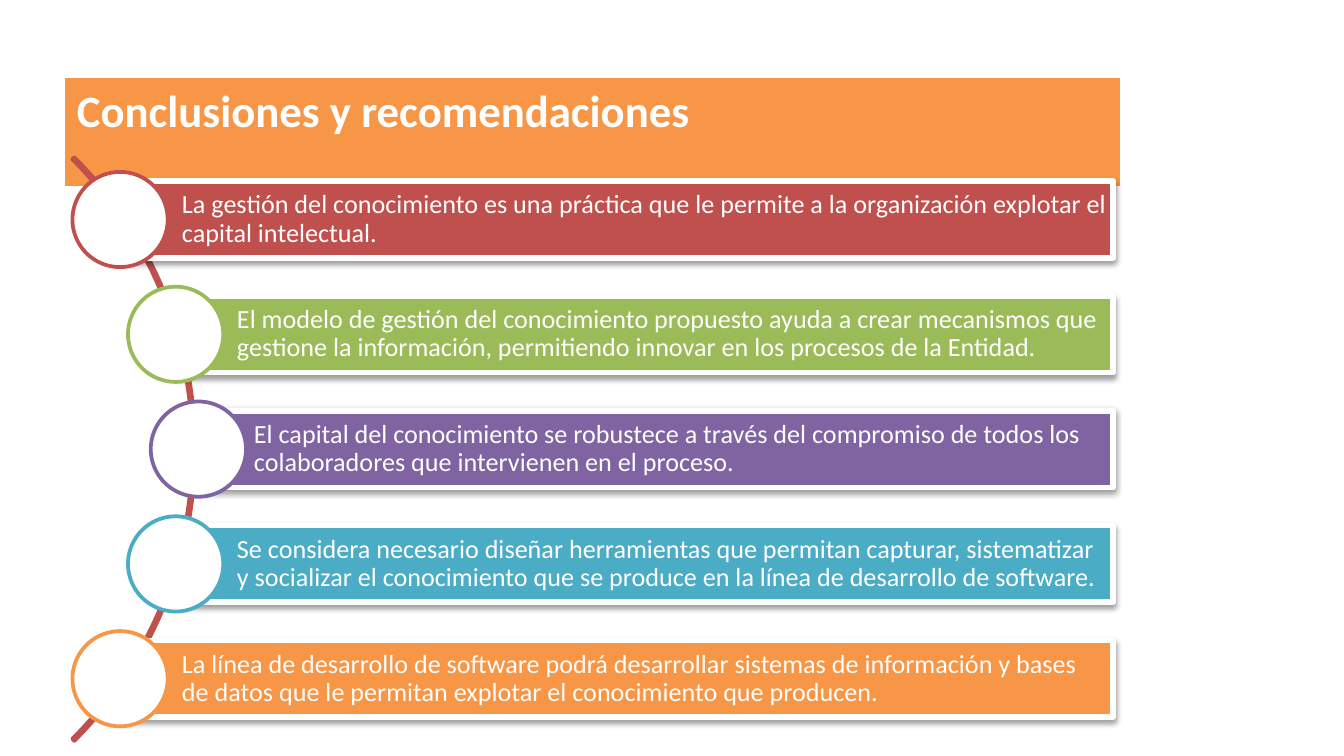
"""Build the slide of conclusions: a title bar and five banners along an arc."""
from lxml import etree
from pptx import Presentation
from pptx import util as u
from pptx.dml.color import RGBColor
from pptx.enum import shapes, text
from pptx.oxml import parse_xml

HUES = {
    "white": "FFFFFF", "red": "C0504D", "green": "9BBB59",
    "violet": "8064A2", "blue": "4BACC6", "orange": "F79646",
}
TITLE = "Conclusiones y recomendaciones"
# colour, left of the banner, centre of its circle, wording
ROWS = [
    ("red", 2.29, 2.27, "La gestión del conocimiento es una práctica que le permite "
     "a la organización explotar el capital intelectual."),
    ("green", 3.33, 3.32, "El modelo de gestión del conocimiento propuesto ayuda a crear "
     "mecanismos que gestione la información, permitiendo innovar en los procesos de la Entidad."),
    ("violet", 3.65, 3.75, "El capital del conocimiento se robustece a través del compromiso "
     "de todos los colaboradores que intervienen en el proceso."),
    ("blue", 3.33, 3.32, "Se considera necesario diseñar herramientas que permitan capturar, "
     "sistematizar y socializar el conocimiento que se produce en la línea de desarrollo de software."),
    ("orange", 2.29, 2.27, "La línea de desarrollo de software podrá desarrollar sistemas de "
     "información y bases de datos que le permitan explotar el conocimiento que producen."),
]
MID, STEP, RIGHT = 4.15, 2.17, 21.04
HIGH, DISC, RING = 1.45, 1.8, 15.6
SHADE = (
    '<a:effectLst xmlns:a="http://schemas.openxmlformats.org/drawingml/2006/main">'
    '<a:outerShdw blurRad="40000" dist="20000" dir="5400000" rotWithShape="0">'
    '<a:srgbClr val="000000"><a:alpha val="38000"/></a:srgbClr>'
    '</a:outerShdw></a:effectLst>'
)
FONT = {"name": "Calibri", "size": u.Pt(14), "bold": False}
HEAD = {"name": "Calibri", "size": u.Pt(24), "bold": True}
FRAME = {
    "word_wrap": True, "vertical_anchor": text.MSO_ANCHOR.MIDDLE,
    "margin_left": u.Cm(1.15), "margin_top": u.Cm(0.1),
    "margin_right": u.Cm(0.1), "margin_bottom": u.Cm(0.1),
}
TOP = {
    "word_wrap": True, "vertical_anchor": text.MSO_ANCHOR.TOP,
    "auto_size": text.MSO_AUTO_SIZE.SHAPE_TO_FIT_TEXT,
}
PARA = {"alignment": text.PP_ALIGN.LEFT, "line_spacing": 0.9}


def apply(obj, vals):
    """Set each attribute of an object."""
    for key, val in vals.items():
        setattr(obj, key, val)


def paint(shape, fill, line, width):
    """Give a shape its fill and outline."""
    shape.fill.solid()
    shape.fill.fore_color.rgb = RGBColor.from_string(HUES[fill])
    shape.line.color.rgb = RGBColor.from_string(HUES[line])
    shape.line.width = u.Pt(width)


def draw(slide, kind, box, fill, line, width):
    """Add a painted shape without a shadow."""
    shape = slide.shapes.add_shape(kind, *map(u.Cm, box))
    shape.shadow.inherit = False
    paint(shape, fill, line, width)
    return shape


def write(shape, words, frame, para, font):
    """Put formatted white text in a shape."""
    shape.text_frame.text = words
    apply(shape.text_frame, frame)
    line = shape.text_frame.paragraphs[0]
    apply(line, para)
    apply(line.font, font)
    line.font.color.rgb = RGBColor.from_string(HUES["white"])


def main():
    """Build and save the slide."""
    deck = Presentation()
    apply(deck, {"slide_width": u.Cm(25.4), "slide_height": u.Cm(14.29)})
    slide = deck.slides.add_slide(deck.slide_layouts[5])

    title = slide.shapes.title
    apply(title, {"left": u.Cm(1.2), "top": u.Cm(1.43),
                  "width": u.Cm(20), "height": u.Cm(1.28)})
    paint(title, "orange", "white", 2)
    write(title, TITLE, TOP, {"alignment": text.PP_ALIGN.LEFT}, HEAD)

    form = shapes.MSO_SHAPE
    hub = MID + STEP * (len(ROWS) - 1) / 2
    arc = draw(slide, form.BLOCK_ARC, (-11.91, hub - RING / 2, RING, RING), "red", "red", 2)
    for spot, val in enumerate((189, 27, 0.0035)):
        arc.adjustments[spot] = val

    for num, (hue, left, mid, words) in enumerate(ROWS):
        row = MID + num * STEP
        bar = draw(slide, form.RECTANGLE, (left, row - HIGH / 2, RIGHT - left, HIGH),
                   hue, "white", 3)
        props = bar._element.spPr
        props.replace(props.find("{*}effectLst"), parse_xml(SHADE))
        write(bar, words, FRAME, PARA, FONT)
        draw(slide, form.OVAL, (mid - DISC / 2, row - DISC / 2, DISC, DISC),
             "white", hue, 2)

    deck.save("out.pptx")


if __name__ == "__main__":
    main()
